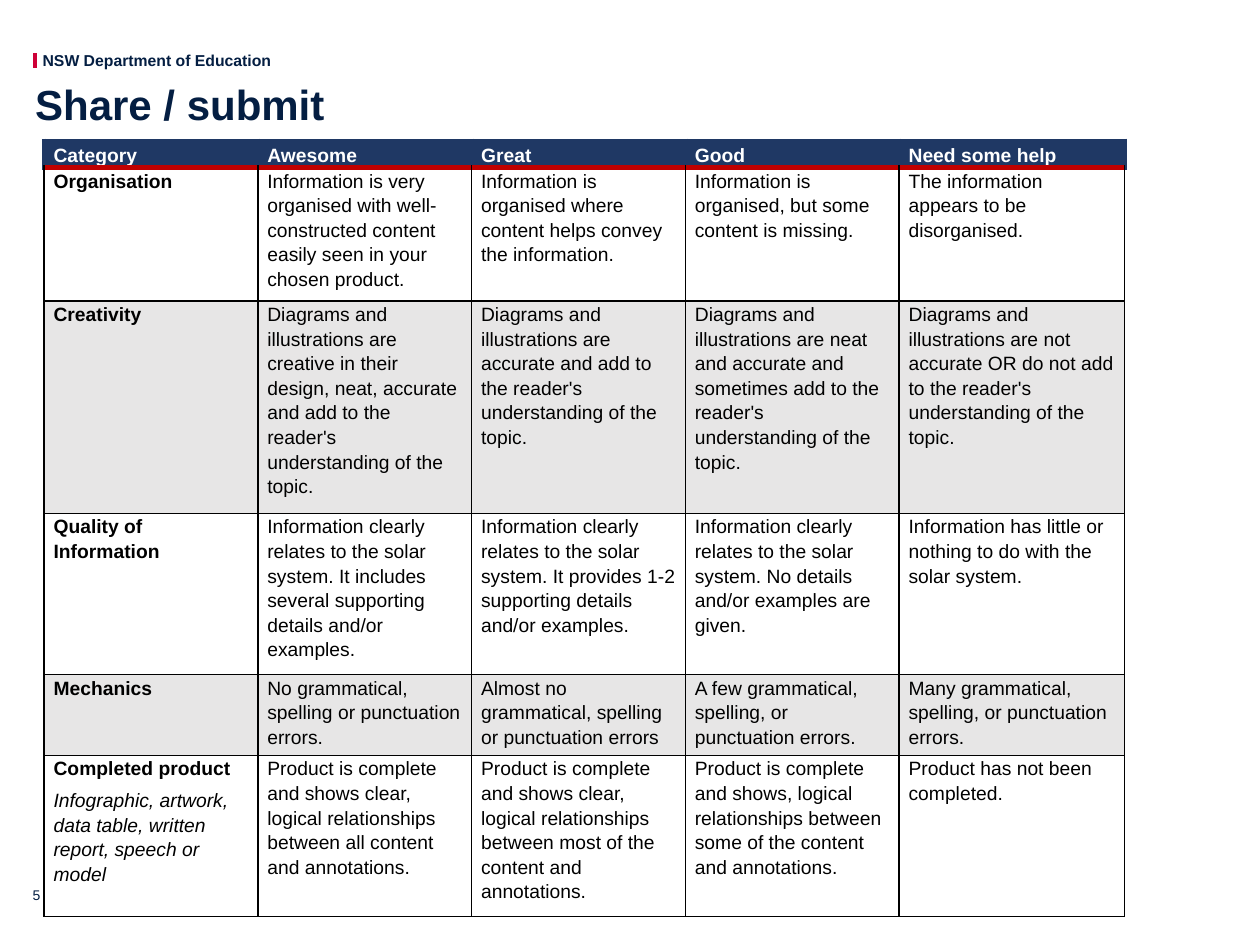
from dataclasses import dataclass

from lxml import etree
from pptx import Presentation
from pptx import util as u
from pptx.dml.color import RGBColor
from pptx.enum import shapes, text
from pptx.oxml import ns


@dataclass(frozen=True)
class Theme:
    font: str = "Arial"
    navy: str = "041E42"
    red: str = "CE0037"
    header_fill: str = "1F3864"
    header_rule: str = "C00000"
    band: str = "E7E6E6"
    black: str = "000000"
    white: str = "FFFFFF"
    title_size: int = 24
    table_size: int = 11
    label_size: int = 9
    number_size: int = 8


COLUMN_WIDTHS = [4.31] * 4 + [4.54]
ROW_HEIGHTS = [0.53, 2.69, 3.25, 3.25, 1.63, 3.25]
HEADINGS = ["Category", "Awesome", "Great", "Good", "Need some help"]
RUBRIC = [
    ["Organisation",
     "Information is very organised with well-constructed content easily seen in your chosen product.",
     "Information is organised where content helps convey the information.",
     "Information is organised, but some content is missing.",
     "The information appears to be disorganised."],
    ["Creativity",
     "Diagrams and illustrations are creative in their design, neat, accurate and add to the "
     "reader's understanding of the topic.",
     "Diagrams and illustrations are accurate and add to the reader's understanding of the topic.",
     "Diagrams and illustrations are neat and accurate and sometimes add to the reader's "
     "understanding of the topic.",
     "Diagrams and illustrations are not accurate OR do not add to the reader's understanding "
     "of the topic."],
    ["Quality of Information",
     "Information clearly relates to the solar system. It includes several supporting details "
     "and/or examples.",
     "Information clearly relates to the solar system. It provides 1-2 supporting details "
     "and/or examples.",
     "Information clearly relates to the solar system. No details and/or examples are given.",
     "Information has little or nothing to do with the solar system."],
    ["Mechanics",
     "No grammatical, spelling or punctuation errors.",
     "Almost no grammatical, spelling or punctuation errors",
     "A few grammatical, spelling, or punctuation errors.",
     "Many grammatical, spelling, or punctuation errors."],
    ["Completed product",
     "Product is complete and shows clear, logical relationships between all content and annotations.",
     "Product is complete and shows clear, logical relationships between most of the content "
     "and annotations.",
     "Product is complete and shows, logical relationships between some of the content and annotations.",
     "Product has not been completed."],
]
PRODUCT_EXAMPLES = "Infographic, artwork, data table, written report, speech or model"


class SlideBuilder:
    def __init__(self, slide, theme):
        self.s = slide
        self.theme = theme

    def run(self, p, words, size, color, bold=False, italic=False):
        r = p.add_run()
        r.text = words
        r.font.name = self.theme.font
        r.font.size = u.Pt(size)
        r.font.bold = bold
        r.font.italic = italic
        r.font.color.rgb = RGBColor.from_string(color)

    def label(self, x, y, w, h, words, size, bold=False, wrap=True,
              anchor=text.MSO_ANCHOR.TOP, spacing=1.0):
        sp = self.s.shapes.add_textbox(u.Cm(x), u.Cm(y), u.Cm(w), u.Cm(h))
        tf = sp.text_frame
        tf.margin_left = tf.margin_right = tf.margin_top = tf.margin_bottom = 0
        tf.word_wrap = wrap
        tf.vertical_anchor = anchor
        p = tf.paragraphs[0]
        p.line_spacing = spacing
        self.run(p, words, size, self.theme.navy, bold)

    def line(self, x1, y1, x2, y2, color, width):
        sp = self.s.shapes.add_connector(
            shapes.MSO_CONNECTOR.STRAIGHT, u.Cm(x1), u.Cm(y1), u.Cm(x2), u.Cm(y2))
        sp.line.color.rgb = RGBColor.from_string(color)
        sp.line.width = u.Pt(width)
        etree.SubElement(sp._element.spPr, ns.qn("a:effectLst"))

    def table(self, x, y, widths, heights):
        frame = self.s.shapes.add_table(
            len(heights), len(widths), u.Cm(x), u.Cm(y),
            u.Cm(sum(widths)), u.Cm(sum(heights)))
        table = frame.table
        table.first_row = table.horz_banding = False
        for column, width in zip(table.columns, widths):
            column.width = u.Cm(width)
        for row, height in zip(table.rows, heights):
            row.height = u.Cm(height)
        return table

    def borders(self, cell, edges):
        """Draw the L, R, T and B edges, each given as (color, points)."""
        tc_pr = cell._tc.get_or_add_tcPr()
        for i, side in enumerate("LRTB"):
            color, width = edges[side]
            ln = etree.Element(ns.qn(f"a:ln{side}"), w=str(u.Pt(width)))
            fill = etree.SubElement(ln, ns.qn("a:solidFill"))
            etree.SubElement(fill, ns.qn("a:srgbClr"), val=color)
            tc_pr.insert(i, ln)

    def cell(self, cell, words, edges, fill=None, color=None, bold=False,
             anchor=text.MSO_ANCHOR.TOP, align=text.PP_ALIGN.LEFT):
        cell.margin_left = cell.margin_right = u.Cm(0.19)
        cell.margin_top = cell.margin_bottom = 0
        cell.vertical_anchor = anchor
        if fill:
            cell.fill.solid()
            cell.fill.fore_color.rgb = RGBColor.from_string(fill)
        else:
            cell.fill.background()
        self.borders(cell, edges)
        p = cell.text_frame.paragraphs[0]
        p.line_spacing = 1.15
        p.alignment = align
        self.run(p, words, self.theme.table_size, color or self.theme.black, bold)

    def cell_note(self, cell, words):
        p = cell.text_frame.add_paragraph()
        p.line_spacing = 1.15
        p.space_before = u.Pt(4)
        self.run(p, words, self.theme.table_size, self.theme.black, italic=True)

    def rubric(self, x, y):
        th = self.theme
        table = self.table(x, y, COLUMN_WIDTHS, ROW_HEIGHTS)
        rule = (th.header_rule, 3)
        header_edges = dict.fromkeys("LRT", (th.header_fill, 3)) | {"B": rule}
        body_edges = dict.fromkeys("LRTB", (th.black, 1))
        for c, heading in enumerate(HEADINGS):
            self.cell(table.cell(0, c), heading, header_edges, th.header_fill, th.white,
                      True, text.MSO_ANCHOR.MIDDLE, text.PP_ALIGN.JUSTIFY)
        for r, row in enumerate(RUBRIC, start=1):
            edges = body_edges | {"T": rule} if r == 1 else body_edges
            fill = th.band if r % 2 == 0 else None
            for c, words in enumerate(row):
                self.cell(table.cell(r, c), words, edges, fill, bold=c == 0)
        self.cell_note(table.cell(len(RUBRIC), 0), PRODUCT_EXAMPLES)


def main():
    prs = Presentation()
    prs.slide_width, prs.slide_height = u.Cm(25.4), u.Cm(19.05)
    theme = Theme()
    b = SlideBuilder(prs.slides.add_slide(prs.slide_layouts[6]), theme)
    b.line(0.71, 1.07, 0.71, 1.37, theme.red, 2.5)
    b.label(0.86, 1.02, 4.65, 0.38, "NSW Department of Education", theme.label_size,
            bold=True, wrap=False)
    b.label(0.71, 1.45, 23.95, 1.4, "Share / submit", theme.title_size, bold=True,
            anchor=text.MSO_ANCHOR.MIDDLE, spacing=0.9)
    b.label(0.66, 17.2, 0.71, 1.02, "5", theme.number_size, anchor=text.MSO_ANCHOR.BOTTOM)
    b.rubric(0.89, 2.84)
    prs.save("out.pptx")


if __name__ == "__main__":
    main()
